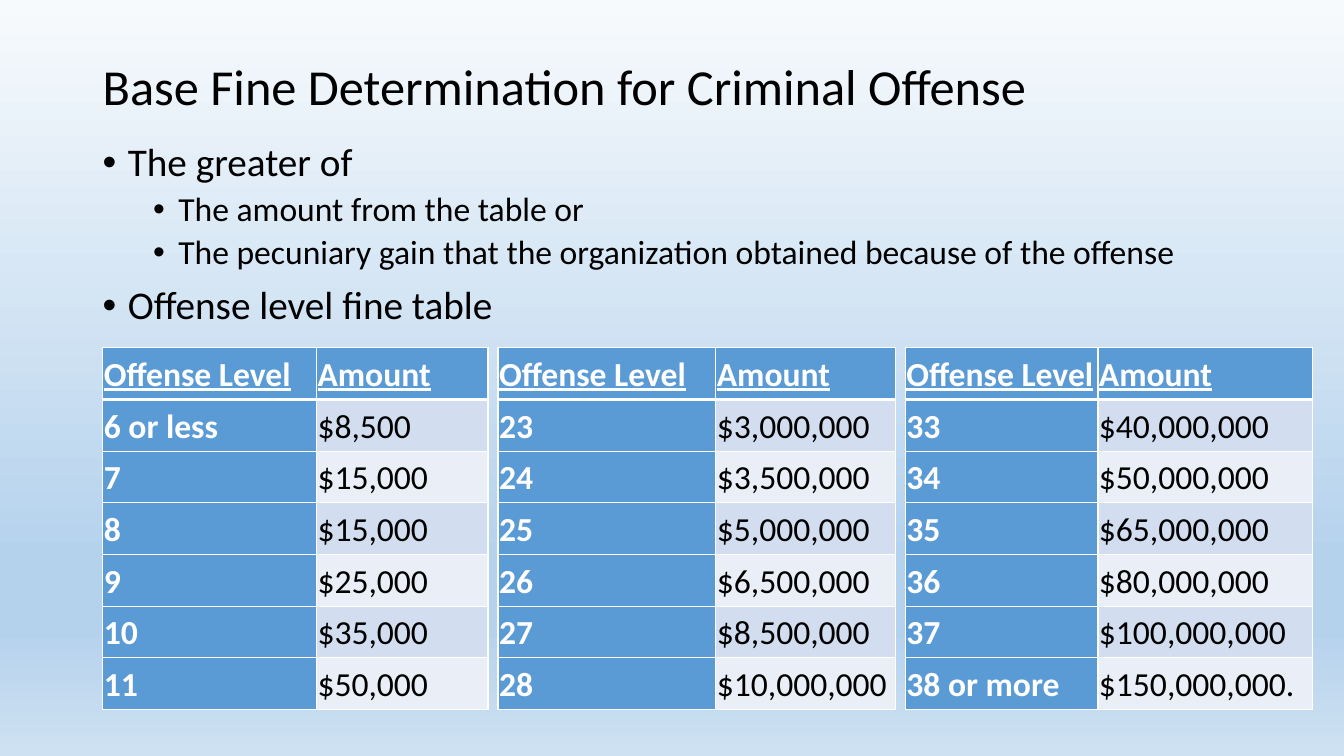
from dataclasses import dataclass

from lxml.etree import SubElement
from pptx import Presentation
from pptx.dml.color import RGBColor as RGB
from pptx.enum.text import MSO_ANCHOR as Anchor
from pptx.oxml.ns import qn
from pptx.util import Emu, Pt


@dataclass(frozen=True)
class Theme:
    font: str = "Calibri"
    title: int = 36
    levels: tuple = (28, 24)
    cell: int = 24
    ink: str = "000000"
    white: str = "FFFFFF"
    accent: str = "5B9BD5"
    bands: tuple = ("D2DEEF", "EAEFF7")
    sky: tuple = ((0, "F7FAFD"), (74, "B5D2EC"), (83, "B5D2EC"), (100, "CEE1F2"))
    grid: int = 1
    header_rule: int = 3


THEME = Theme()

POINTS = [
    (0, "The greater of"),
    (1, "The amount from the table or"),
    (1, "The pecuniary gain that the organization obtained because of the offense"),
    (0, "Offense level fine table"),
]

HEADER = ("Offense Level", "Amount")
LOW_FINES = [("6 or less", "$8,500"), ("7", "$15,000"), ("8", "$15,000"),
             ("9", "$25,000"), ("10", "$35,000"), ("11", "$50,000")]
MIDDLE_FINES = [("23", "$3,000,000"), ("24", "$3,500,000"), ("25", "$5,000,000"),
                ("26", "$6,500,000"), ("27", "$8,500,000"), ("28", "$10,000,000")]
HIGH_FINES = [("33", "$40,000,000"), ("34", "$50,000,000"), ("35", "$65,000,000"),
              ("36", "$80,000,000"), ("37", "$100,000,000"),
              ("38 or more", "$150,000,000.")]


def px(length):
    """100 px to the inch."""
    return Emu(length * 9144)


def style(paragraph, size, color, spacing, bold=False, underline=False):
    paragraph.line_spacing = spacing
    font = paragraph.font
    font.name, font.size = THEME.font, Pt(size)
    font.bold, font.underline = bold, underline
    font.color.rgb = RGB.from_string(color)


def add_solid(parent, color):
    SubElement(SubElement(parent, qn("a:solidFill")), qn("a:srgbClr"), val=color)


# Background
def paint_sky(slide):
    fill = slide.background.fill
    fill.gradient()
    fill.gradient_angle = 270
    stops = next(slide.element.iter(qn("a:gsLst")))
    for stop in list(stops):
        stops.remove(stop)
    for percent, color in THEME.sky:
        stop = SubElement(stops, qn("a:gs"), pos=str(percent * 1000))
        SubElement(stop, qn("a:srgbClr"), val=color)


def add_frame(slide, box, anchor):
    frame = slide.shapes.add_textbox(*map(px, box)).text_frame
    frame.word_wrap = True
    frame.vertical_anchor = anchor
    return frame


# Title
def add_title(slide, box, text):
    title = add_frame(slide, box, Anchor.MIDDLE).paragraphs[0]
    title.text = text
    style(title, THEME.title, THEME.ink, 0.9)


# Bulleted points
def add_points(slide, box, points):
    frame = add_frame(slide, box, Anchor.TOP)
    for index, (level, text) in enumerate(points):
        point = frame.add_paragraph() if index else frame.paragraphs[0]
        point.text = text
        point.level = level
        point.space_before = Pt(5 if level else 10)
        style(point, THEME.levels[level], THEME.ink, 0.9)
        props = point._p.get_or_add_pPr()
        props.set("marL", str(px(25 + 50 * level)))
        props.set("indent", str(px(-25)))
        bullet_font = props.makeelement(qn("a:buFont"), typeface="Arial")
        bullet = props.makeelement(qn("a:buChar"), char="•")
        for part in (bullet_font, bullet):
            props.find(qn("a:defRPr")).addprevious(part)


# Fine tables
def rule_cell(cell, row):
    props = cell._tc.get_or_add_tcPr()
    widths = {
        "lnL": THEME.grid,
        "lnR": THEME.grid,
        "lnT": THEME.header_rule if row == 1 else THEME.grid,
        "lnB": THEME.header_rule if row == 0 else THEME.grid,
    }
    for position, (side, width) in enumerate(widths.items()):
        line = props.makeelement(qn(f"a:{side}"), w=str(Pt(width)))
        add_solid(line, THEME.white)
        props.insert(position, line)


def add_fine_table(slide, box, level_width, fines):
    rows = [HEADER, *fines]
    table = slide.shapes.add_table(len(rows), 2, *map(px, box)).table
    for column, width in zip(table.columns, (level_width, box[2] - level_width)):
        column.width = px(width)
    for row, values in enumerate(rows):
        for column, text in enumerate(values):
            heading = row == 0 or column == 0
            cell = table.cell(row, column)
            cell.margin_left = cell.margin_right = px(1)
            cell.margin_top = cell.margin_bottom = px(1)
            cell.vertical_anchor = Anchor.MIDDLE
            cell.fill.solid()
            cell.fill.fore_color.rgb = RGB.from_string(
                THEME.accent if heading else THEME.bands[(row - 1) % 2])
            rule_cell(cell, row)
            entry = cell.text_frame.paragraphs[0]
            entry.text = text
            style(entry, THEME.cell, THEME.white if heading else THEME.ink, 1.07,
                  bold=heading, underline=row == 0)


def build_fine_slide(slide, box):
    left, top, width, height = box
    paint_sky(slide)
    add_title(slide, (left, top, width, 97), "Base Fine Determination for Criminal Offense")
    add_points(slide, (left, top + 97, width, height - 97), POINTS)
    table_left, gap = left + 10, 10
    for table_width, level_width, fines in ((382, 212, LOW_FINES),
                                            (394, 216, MIDDLE_FINES),
                                            (404, 191, HIGH_FINES)):
        add_fine_table(slide, (table_left, top + 305, table_width, 359), level_width, fines)
        table_left += table_width + gap


def main():
    deck = Presentation()
    deck.slide_width, deck.slide_height = px(1333), px(750)
    slide = deck.slides.add_slide(deck.slide_layouts[6])
    build_fine_slide(slide, (92, 40, 1150, 635))
    deck.save("out.pptx")


if __name__ == "__main__":
    main()
